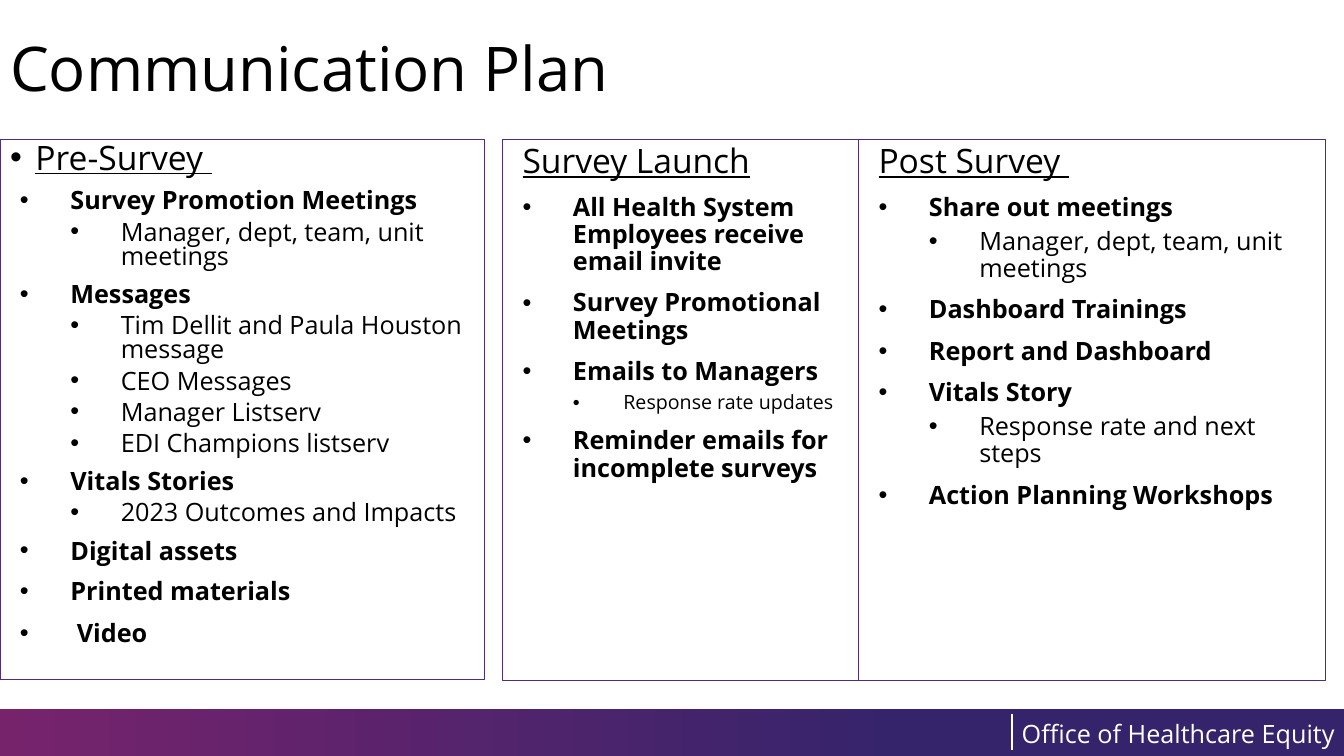
from lxml import etree
from pptx import Presentation
from pptx.dml.color import RGBColor
from pptx.enum import shapes, text
from pptx.oxml import ns
from pptx.util import Cm, Pt

BLACK = RGBColor(0x00, 0x00, 0x00)
WHITE = RGBColor(0xFF, 0xFF, 0xFF)
VIOLET = RGBColor(0x4B, 0x2E, 0x83)
NAVY = RGBColor(0x35, 0x24, 0x6C)
PLUM = RGBColor(0x77, 0x23, 0x6C)

WIDTH, HEIGHT = 33.87, 19.05
TOP = 3.51

# Text formats: head, topic, detail
HEAD = {"size": Pt(24), "underline": True, "bold": False}
TOPIC = {"size": Pt(18), "underline": False, "bold": True}
DETAIL = {"size": Pt(18), "underline": False, "bold": False}
SMALL = {**DETAIL, "size": Pt(14)}

# Paragraph formats: level, left margin, first-line indent, space before
PLAIN = (0, 0.25, 0, 0)
DOT = (0, 0.64, -0.64, 0)
OUTER = (0, 1.52, -1.27, 10)
INNER = (1, 2.79, -1.27, 5)


def topic(words, gap=0.9):
    return words, TOPIC, OUTER, gap


def detail(words, gap=0.9, form=DETAIL):
    return words, form, INNER, gap


BEFORE = [
    ("Pre-Survey ", HEAD, DOT, 0.8),
    topic("Survey Promotion Meetings", 0.8),
    detail("Manager, dept, team, unit meetings", 0.8),
    topic("Messages", 0.8),
    detail("Tim Dellit and Paula Houston message", 0.8),
    detail("CEO Messages", 0.8),
    detail("Manager Listserv", 0.8),
    detail("EDI Champions listserv", 0.8),
    topic("Vitals Stories", 0.8),
    detail("2023 Outcomes and Impacts", 0.8),
    topic("Digital assets", 0.8),
    topic("Printed materials"),
    topic(" Video"),
]
LAUNCH = [
    ("Survey Launch", HEAD, PLAIN, 0.9),
    topic("All Health System Employees receive email invite"),
    topic("Survey Promotional Meetings"),
    topic("Emails to Managers"),
    detail("Response rate updates", form=SMALL),
    topic("Reminder emails for incomplete surveys"),
]
AFTER = [
    ("Post Survey ", HEAD, PLAIN, 0.9),
    topic("Share out meetings"),
    detail("Manager, dept, team, unit meetings"),
    topic("Dashboard Trainings"),
    topic("Report and Dashboard"),
    topic("Vitals Story"),
    detail("Response rate and next steps"),
    topic("Action Planning Workshops"),
]


class Deck:
    face = "Open Sans"

    def __init__(self):
        self.prs = Presentation()
        self.prs.slide_width, self.prs.slide_height = Cm(WIDTH), Cm(HEIGHT)
        self.slide = self.prs.slides.add_slide(self.prs.slide_layouts[1])

    def place(self, shape, x, y, w, h):
        spots = {"left": x, "top": y, "width": w, "height": h}
        for name, value in spots.items():
            setattr(shape, name, Cm(value))

    def frame(self, shape, wrap=True):
        form = {"word_wrap": wrap, "auto_size": text.MSO_AUTO_SIZE.NONE,
                "vertical_anchor": text.MSO_ANCHOR.TOP}
        for name, value in form.items():
            setattr(shape.text_frame, name, value)
        return shape.text_frame

    def style(self, para, form, color=BLACK):
        para.alignment = text.PP_ALIGN.LEFT
        for name, value in {"name": self.face, **form}.items():
            setattr(para.runs[0].font, name, value)
        para.runs[0].font.color.rgb = color

    def bullet(self, para, left, first):
        props = para._p.get_or_add_pPr()
        props.set("marL", str(Cm(left)))
        props.set("indent", str(Cm(first)))
        if first:
            etree.SubElement(props, ns.qn("a:buFont")).set("typeface", "Arial")
            etree.SubElement(props, ns.qn("a:buChar")).set("char", "•")
        else:
            etree.SubElement(props, ns.qn("a:buNone"))

    def title(self, words, *spot):
        shape = self.slide.shapes.title
        self.place(shape, *spot)
        para = self.frame(shape).paragraphs[0]
        para.text = words
        para.line_spacing = 0.8
        para.space_before = Pt(0)
        self.style(para, {"size": Pt(44)})

    def body(self, rows, *spot):
        shape = self.slide.placeholders[1]
        self.place(shape, *spot)
        self.fill(shape, rows)

    def panel(self, rows, *spot):
        shape = self.slide.shapes.add_shape(
            shapes.MSO_SHAPE.RECTANGLE, *map(Cm, spot))
        shape.shadow.inherit = False
        self.fill(shape, rows)

    def fill(self, shape, rows):
        shape.fill.background()
        shape.line.color.rgb = VIOLET
        shape.line.width = Pt(0.75)
        frame = self.frame(shape)
        for i, (words, form, (level, left, first, above), gap) in enumerate(rows):
            para = frame.add_paragraph() if i else frame.paragraphs[0]
            para.text = words
            self.bullet(para, left, first)
            para.level = level
            para.line_spacing = gap
            para.space_before = Pt(above)
            self.style(para, form)

    def band(self, *spot):
        shape = self.slide.shapes.add_shape(
            shapes.MSO_SHAPE.RECTANGLE, *map(Cm, spot))
        shape.shadow.inherit = False
        shape.line.fill.background()
        shape.fill.gradient()
        shape.fill.gradient_angle = 0
        stops = ((0, PLUM), (0.67, NAVY))
        for stop, (place, color) in zip(shape.fill.gradient_stops, stops):
            stop.position = place
            stop.color.rgb = color

    def label(self, words, *spot):
        box = self.slide.shapes.add_textbox(*map(Cm, spot))
        para = self.frame(box).paragraphs[0]
        para.text = words
        self.style(para, {"size": Pt(18)}, WHITE)

    def rule(self, *ends):
        line = self.slide.shapes.add_connector(
            shapes.MSO_CONNECTOR.STRAIGHT, *map(Cm, ends))
        line.line.color.rgb = WHITE
        line.line.width = Pt(1.5)
        etree.SubElement(line._element.spPr, ns.qn("a:effectLst"))


def main():
    deck = Deck()

    # Footer
    deck.band(0, 17.86, WIDTH, HEIGHT - 17.86)
    deck.label("Office of Healthcare Equity", 25.5, 17.98, 9.27, 1.02)
    deck.rule(25.5, 17.98, 25.5, 18.9)

    # Title and the three survey phases
    deck.title("Communication Plan", 0, 0.99, 29.18, 1.85)
    deck.body(BEFORE, 0, TOP, 12.22, 13.61)
    deck.panel(LAUNCH, 12.67, TOP, 8.97, 13.64)
    deck.panel(AFTER, 21.64, TOP, 11.76, 13.64)

    deck.prs.save("out.pptx")


if __name__ == "__main__":
    main()
